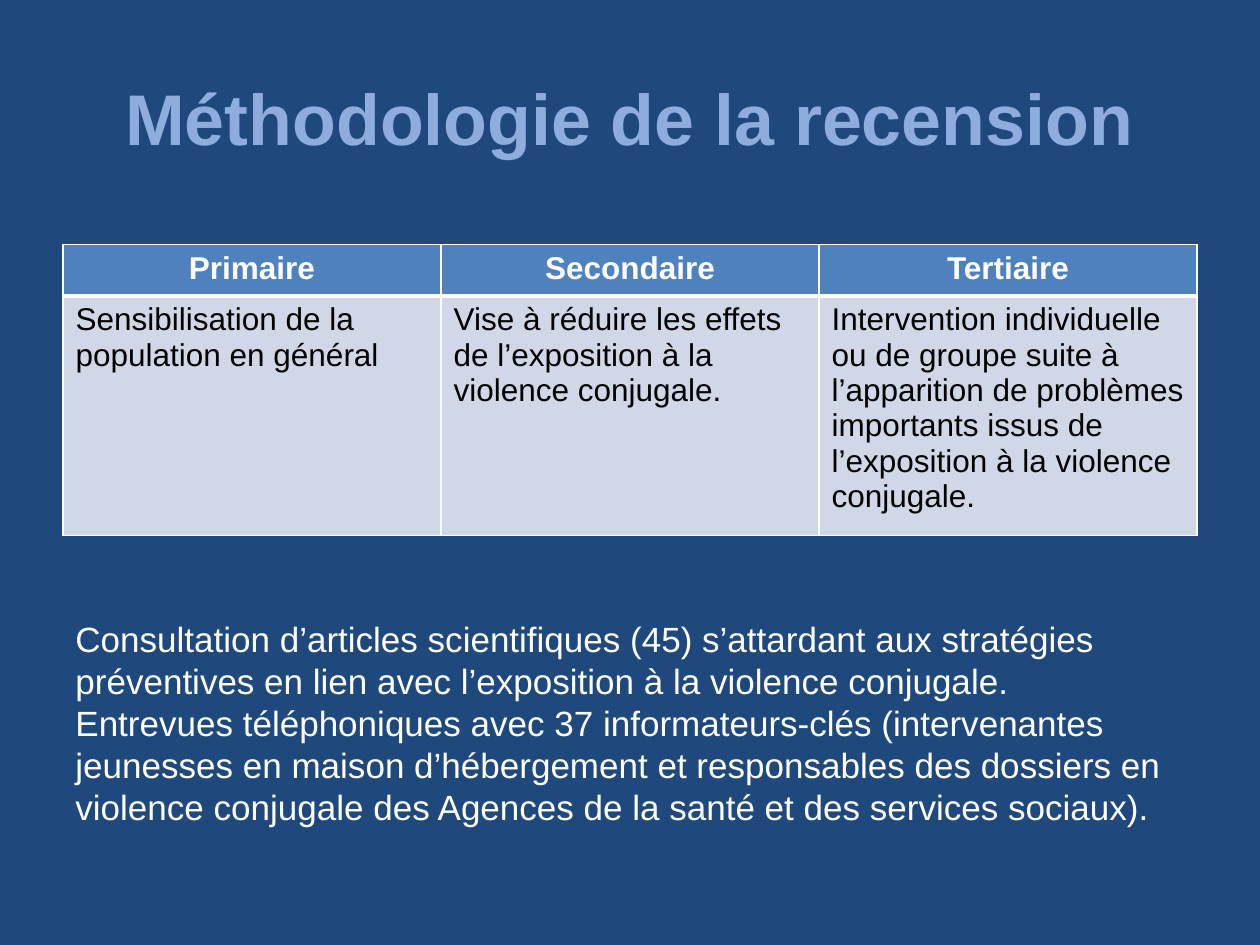
from lxml.etree import SubElement
from pptx import Presentation
from pptx.dml.color import RGBColor
from pptx.enum.text import MSO_ANCHOR, PP_ALIGN
from pptx.oxml.ns import qn
from pptx.util import Pt

TITLE = "Méthodologie de la recension"
PREVENTION = [
    ("Primaire", "Sensibilisation de la population en général"),
    ("Secondaire", "Vise à réduire les effets de l’exposition à la violence conjugale."),
    ("Tertiaire", "Intervention individuelle ou de groupe suite à l’apparition de problèmes "
                  "importants issus de l’exposition à la violence conjugale."),
]
SOURCES = [
    "Consultation d’articles scientifiques (45) s’attardant aux stratégies préventives "
    "en lien avec l’exposition à la violence conjugale.",
    "Entrevues téléphoniques avec 37 informateurs-clés (intervenantes jeunesses en maison "
    "d’hébergement et responsables des dossiers en violence conjugale des Agences de la "
    "santé et des services sociaux).",
]

FONT = "Arial"
NAVY = RGBColor(0x1F, 0x49, 0x7D)
PERIWINKLE = RGBColor(0x8F, 0xAC, 0xDE)
BLUE = RGBColor(0x4F, 0x81, 0xBD)
PALE = RGBColor(0xD0, 0xD8, 0xE8)
WHITE = RGBColor(0xFF, 0xFF, 0xFF)
BLACK = RGBColor(0, 0, 0)

LEFT, WIDTH = 36, 648
ROW_HEIGHTS = (29.5, 136.8)


def style(frame, size, color, bold=False, align=PP_ALIGN.LEFT):
    for paragraph in frame.paragraphs:
        paragraph.alignment = align
        for run in paragraph.runs:
            font = run.font
            font.name, font.size, font.bold = FONT, Pt(size), bold
            font.color.rgb = color


def fill_cell(cell, text, fill, color, bold, align, widths):
    cell.text_frame.text = text
    style(cell.text_frame, 18, color, bold, align)
    props = cell._tc.get_or_add_tcPr()
    for side, width in zip("LRTB", widths):
        line = SubElement(props, qn(f"a:ln{side}"), w=str(Pt(width)))
        SubElement(SubElement(line, qn("a:solidFill")), qn("a:srgbClr"), val=str(WHITE))
    cell.fill.solid()
    cell.fill.fore_color.rgb = fill


deck = Presentation()
deck.slide_width, deck.slide_height = Pt(720), Pt(540)
slide = deck.slides.add_slide(deck.slide_layouts[5])
slide.background.fill.solid()
slide.background.fill.fore_color.rgb = NAVY

title = slide.shapes.title
title.left, title.top, title.width, title.height = Pt(LEFT), Pt(21.6), Pt(WIDTH), Pt(90)
title.text_frame.text = TITLE
title.text_frame.vertical_anchor = MSO_ANCHOR.MIDDLE
style(title.text_frame, 41, PERIWINKLE, True, PP_ALIGN.CENTER)

levels = slide.shapes.add_table(
    2, len(PREVENTION), Pt(LEFT), Pt(139.7), Pt(WIDTH), Pt(sum(ROW_HEIGHTS))).table
for row, height in zip(levels.rows, ROW_HEIGHTS):
    row.height = Pt(height)
for column, (level, aim) in enumerate(PREVENTION):
    fill_cell(levels.cell(0, column), level, BLUE, WHITE, True, PP_ALIGN.CENTER, (1, 1, 1, 3))
    fill_cell(levels.cell(1, column), aim, PALE, BLACK, False, PP_ALIGN.LEFT, (1, 1, 3, 1))

sources = slide.shapes.add_textbox(Pt(LEFT), Pt(349.2), Pt(658.8), Pt(150.5)).text_frame
sources.word_wrap = True
sources.text = "\n".join(SOURCES)
style(sources, 20, WHITE)

deck.save("out.pptx")
